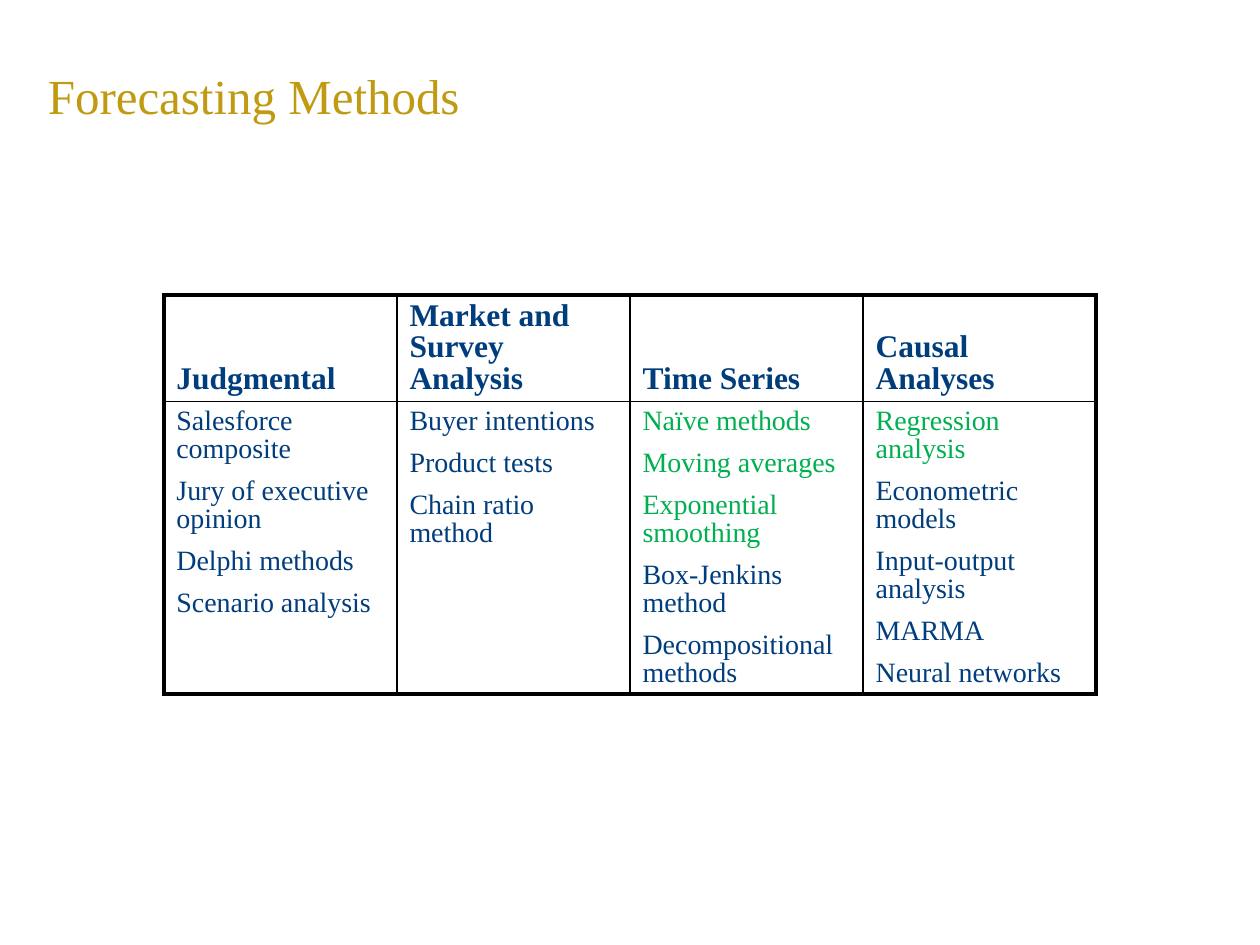
from dataclasses import dataclass

import lxml.etree
import pptx
import pptx.dml.color
import pptx.enum.text
import pptx.oxml.ns
import pptx.util

Inches = pptx.util.Inches
Pt = pptx.util.Pt


@dataclass(frozen=True)
class Theme:
    font: str = "Times New Roman"
    gold: str = "C09B12"
    navy: str = "003D7D"
    green: str = "00B050"
    border: str = "000000"
    title_size: float = 28
    header_size: float = 18
    body_size: float = 16
    outer_line: float = 2.25
    inner_line: float = 1


METHODS = {
    "Judgmental": ["Salesforce composite", "Jury of executive opinion",
                   "Delphi methods", "Scenario analysis"],
    "Market and Survey Analysis": ["Buyer intentions", "Product tests",
                                   "Chain ratio method"],
    "Time Series": ["Naïve methods", "Moving averages", "Exponential smoothing",
                    "Box-Jenkins method", "Decompositional methods"],
    "Causal Analyses": ["Regression analysis", "Econometric models",
                        "Input-output analysis", "MARMA", "Neural networks"],
}
HIGHLIGHTED = {"Naïve methods", "Moving averages", "Exponential smoothing",
               "Regression analysis"}


class SlideBuilder:
    def __init__(self, prs, theme):
        self.theme = theme
        self.s = prs.slides.add_slide(prs.slide_layouts[5])

    def style(self, p, size, color, bold=False):
        p.font.name = self.theme.font
        p.font.size = Pt(size)
        p.font.bold = bold
        p.font.color.rgb = pptx.dml.color.RGBColor.from_string(color)

    def title(self, text, left, top, width, height):
        sp = self.s.shapes.title
        sp.left, sp.top, sp.width, sp.height = map(Inches, (left, top, width, height))
        tf = sp.text_frame
        tf.text = text
        tf.vertical_anchor = pptx.enum.text.MSO_ANCHOR.MIDDLE
        p = tf.paragraphs[0]
        p.alignment = pptx.enum.text.PP_ALIGN.LEFT
        self.style(p, self.theme.title_size, self.theme.gold)

    def borders(self, cell, outer):
        tc_pr = cell._tc.get_or_add_tcPr()
        for i, side in enumerate(("lnL", "lnR", "lnT", "lnB")):
            width = self.theme.outer_line if side in outer else self.theme.inner_line
            ln = lxml.etree.Element(pptx.oxml.ns.qn(f"a:{side}"), w=str(Pt(width)))
            fill = lxml.etree.SubElement(ln, pptx.oxml.ns.qn("a:solidFill"))
            lxml.etree.SubElement(fill, pptx.oxml.ns.qn("a:srgbClr"),
                                  val=self.theme.border)
            tc_pr.insert(i, ln)

    def cell(self, cell, items, header, outer):
        anchors = pptx.enum.text.MSO_ANCHOR
        cell.vertical_anchor = anchors.BOTTOM if header else anchors.TOP
        cell.fill.background()
        self.borders(cell, outer)
        size = self.theme.header_size if header else self.theme.body_size
        tf = cell.text_frame
        tf.text = "\n".join(items)
        for p, item in zip(tf.paragraphs, items):
            p.line_spacing = 0.9
            p.space_after = Pt(size / 2)
            color = self.theme.green if item in HIGHLIGHTED else self.theme.navy
            self.style(p, size, color, header)

    def table(self, columns, left, top, width, row_heights):
        table = self.s.shapes.add_table(
            len(row_heights), len(columns), Inches(left), Inches(top),
            Inches(width), Inches(sum(row_heights))).table
        table.first_row = table.horz_banding = False
        for row, height in zip(table.rows, row_heights):
            row.height = Inches(height)
        last = len(columns) - 1
        for c, (heading, methods) in enumerate(columns.items()):
            table.columns[c].width = Inches(width / len(columns))
            edges = {0: {"lnL"}, last: {"lnR"}}.get(c, set())
            self.cell(table.cell(0, c), [heading], True, edges | {"lnT"})
            self.cell(table.cell(1, c), methods, False, edges | {"lnB"})


def main():
    prs = pptx.Presentation()
    prs.slide_width, prs.slide_height = Inches(10), Inches(7.5)
    slide = SlideBuilder(prs, Theme())
    slide.title("Forecasting Methods", 0.28, 0.21, 7.81, 1.08)
    slide.table(METHODS, 1.3, 2.34, 7.4, (0.72, 2.09))
    prs.save("out.pptx")


if __name__ == "__main__":
    main()
